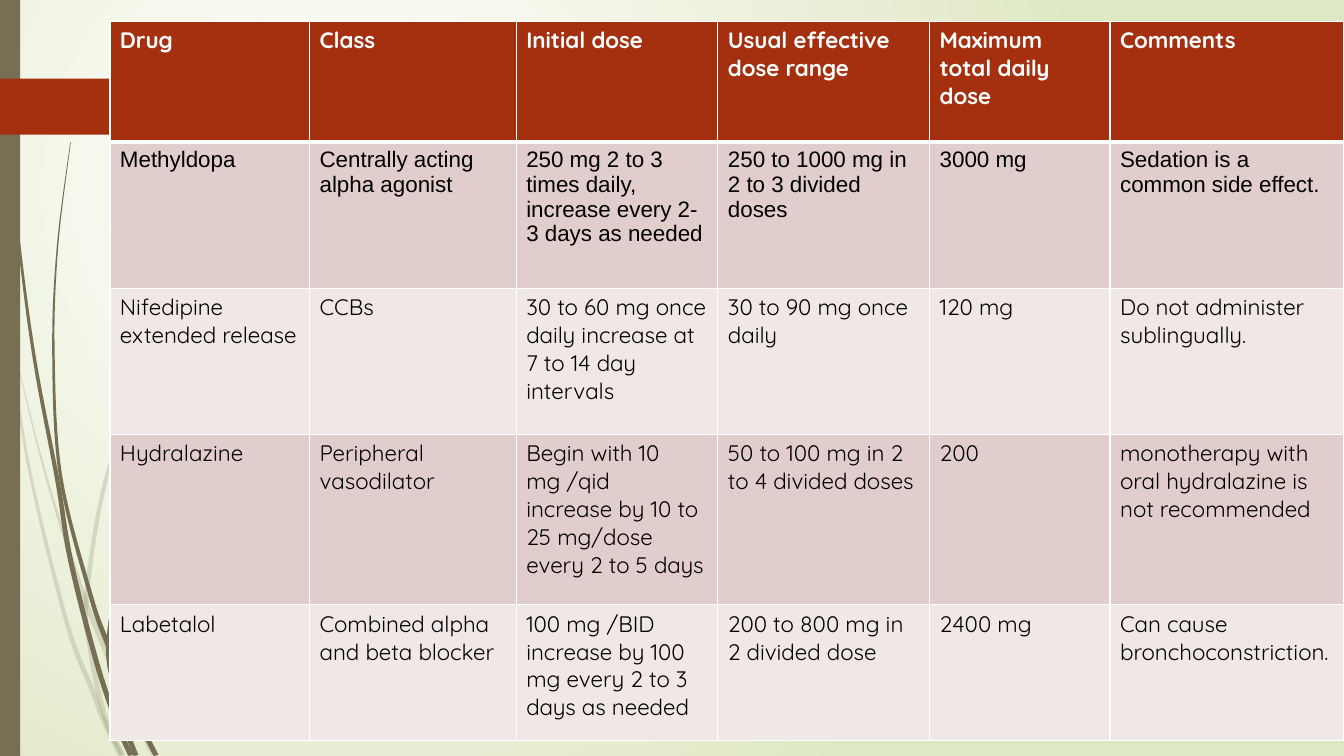
from dataclasses import dataclass
from math import hypot

from lxml import etree
from pptx import Presentation
from pptx.dml.color import RGBColor
from pptx.enum.shapes import MSO_SHAPE
from pptx.oxml.ns import qn
from pptx.util import Inches, Pt

RECT = MSO_SHAPE.RECTANGLE
ARROW = MSO_SHAPE.PENTAGON
WIDE, HIGH = 13.33, 7.5


@dataclass(frozen=True)
class Theme:
    white: str = "FFFFFF"
    mist: str = "DFE8C4"
    bark: str = "766F54"
    rust: str = "A53010"
    rose: str = "E1CDCC"
    pale: str = "F0E8E7"
    ink: str = "000000"
    font: str = "Quicksand"
    plain: str = "Arial"
    size: int = 16
    thin: int = 1
    thick: int = 3
    faint: int = 20


THEME = Theme()

COLS = [1.98, 2.05, 2, 2.1, 1.79, 2.32]
ROWS = [1.2, 1.45, 1.45, 1.69, 1.35]
DRUGS = [
    ["Drug", "Class", "Initial dose", "Usual effective dose range",
     "Maximum total daily dose", "Comments"],
    ["Methyldopa", "Centrally acting alpha agonist",
     "250 mg 2 to 3 times daily, increase every 2-3 days as needed",
     "250 to 1000 mg in 2 to 3 divided doses", "3000 mg", "Sedation is a common side effect."],
    ["Nifedipine extended release", "CCBs",
     "30 to 60 mg once daily increase at 7 to 14 day intervals",
     "30 to 90 mg once daily", "120 mg", "Do not administer sublingually."],
    ["Hydralazine", "Peripheral vasodilator",
     "Begin with 10 mg /qid\nincrease by 10 to 25 mg/dose every 2 to 5 days",
     "50 to 100 mg in 2 to 4 divided doses", "200",
     "monotherapy with oral hydralazine is not recommended"],
    ["Labetalol", "Combined alpha and beta blocker",
     "100 mg /BID increase by 100 mg every 2 to 3 days as needed",
     "200 to 800 mg in 2 divided dose", "2400 mg", "Can cause bronchoconstriction."],
]

PALE_GRASS = [
    ([(0, 2.85), (0.11, 3.5), (0.3, 4.7), (0.67, 6.2), (0.93, 6.88),
      (1.02, 7.13), (1.2, 7.5)], (1, 5)),
    ([(0.14, 3.45), (0.38, 4.44), (0.6, 5.2), (0.83, 5.9), (0.9, 6.1),
      (1.25, 6.93), (1.53, 7.5)], (3, 4)),
    ([(3.12, 1.53), (2.28, 2.45), (1.59, 3.48), (1.09, 4.61), (0.86, 5.9),
      (0.9, 6.46), (1.04, 7.11), (1.22, 7.5)], (4, 6)),
]
DARK_GRASS = [
    ([(0.03, 0), (0.07, 1.1), (0.18, 2.33), (0.34, 3.55), (0.57, 4.77),
      (0.7, 5.56), (0.96, 6.58), (1.17, 7.2), (1.3, 7.5)], (4, 7)),
    ([(0.7, 1.41), (0.57, 2.45), (0.53, 3.49), (0.6, 4.72), (0.9, 5.91),
      (1.06, 6.37), (1.12, 6.52), (1.34, 7.07), (1.55, 7.5)], (3, 5, 6)),
    ([(2.6, 3.44), (2.04, 4.06), (1.57, 4.75), (1.23, 5.51), (1.08, 6.35),
      (1.13, 6.8), (1.23, 7.18), (1.35, 7.5)], (4, 6)),
]
STEPS = 8


def rgb(tint):
    return RGBColor.from_string(tint)


def paint(shape, tint, alpha=100):
    shape.shadow.inherit = False
    shape.fill.solid()
    shape.fill.fore_color.rgb = rgb(tint)
    shape.line.fill.background()
    if alpha < 100:
        dye = shape.fill._xPr.find(".//" + qn("a:srgbClr"))
        etree.SubElement(dye, qn("a:alpha"), val=str(alpha * 1000))


def glow(slide):
    fill = slide.background.fill
    fill.gradient()
    for stop, tint, spot in zip(fill.gradient_stops, (THEME.white, THEME.mist), (0, 1)):
        stop.color.rgb = rgb(tint)
        stop.position = spot
    grad = slide.element.find(".//" + qn("a:gradFill"))
    grad.remove(grad.find(qn("a:lin")))
    ring = etree.SubElement(grad, qn("a:path"), {"path": "circle"})
    etree.SubElement(ring, qn("a:fillToRect"), l="50000", t="50000", r="100000", b="100000")


def smooth(knots):
    ends = [knots[0], *knots, knots[-1]]
    for quad in zip(ends, ends[1:], ends[2:], ends[3:]):
        for step in range(STEPS):
            t = step / STEPS
            yield tuple(
                (2 * q + (r - p) * t + (2 * p - 5 * q + 4 * r - s) * t ** 2
                 + (3 * q - p - 3 * r + s) * t ** 3) / 2
                for p, q, r, s in zip(*quad))
    yield knots[-1]


def blade(slide, box, knots, cuts, alpha):
    left, top = box[:2]
    spine = list(smooth(knots))
    last = len(spine) - 1
    near, far = [], []
    for i, (x, y) in enumerate(spine):
        ax, ay = spine[max(i - 1, 0)]
        bx, by = spine[min(i + 1, last)]
        half = 0.025 * min(1, 0.1 + 1.5 * i / last) / hypot(bx - ax, by - ay)
        dx, dy = half * (by - ay), half * (bx - ax)
        for edge, sign in ((near, -1), (far, 1)):
            edge.append((Inches(left + max(x + sign * dx, 0)),
                         Inches(top + min(y - sign * dy, HIGH))))
    marks = [0, *(cut * STEPS for cut in cuts), last]
    for start, end in zip(marks, marks[1:]):
        rim = near[start:end + 1] + far[start:end + 1][::-1]
        form = slide.shapes.build_freeform(*rim[0], scale=1)
        form.add_line_segments(rim[1:], close=True)
        paint(form.convert_to_shape(), THEME.bark, alpha)


def grass(slide, box):
    for group, alpha in ((PALE_GRASS, THEME.faint), (DARK_GRASS, 100)):
        for knots, cuts in group:
            blade(slide, box, knots, cuts, alpha)


def block(slide, box, kind, tint):
    shape = slide.shapes.add_shape(kind, *map(Inches, box))
    paint(shape, tint)
    return shape


def side(slide, box):
    left, top, width, height = box
    block(slide, (left, top, 0.015 * width, height), RECT, THEME.bark)
    tag = block(slide, (left, top + 0.104 * height, 0.13 * width, 0.074 * height),
                ARROW, THEME.rust)
    tag.adjustments[0] = 0.45


def rule(cell, row):
    props = cell._tc.get_or_add_tcPr()
    for spot, edge in enumerate(("lnL", "lnR", "lnT", "lnB")):
        bold = (row, edge) in ((0, "lnB"), (1, "lnT"))
        line = etree.Element(qn("a:" + edge), w=str(Pt(THEME.thick if bold else THEME.thin)))
        fill = etree.SubElement(line, qn("a:solidFill"))
        etree.SubElement(fill, qn("a:srgbClr"), val=THEME.white)
        props.insert(spot, line)


def write(cell, words, font, tint, bold):
    frame = cell.text_frame
    for i, part in enumerate(words.split("\n")):
        para = frame.add_paragraph() if i else frame.paragraphs[0]
        run = para.add_run()
        run.text = part
        run.font.name = font
        run.font.size = Pt(THEME.size)
        run.font.bold = bold
        run.font.color.rgb = rgb(tint)


def doses(slide, box):
    grid = slide.shapes.add_table(len(ROWS), len(COLS), *map(Inches, box)).table
    for col, width in zip(grid.columns, COLS):
        col.width = Inches(width)
    for row, height in zip(grid.rows, ROWS):
        row.height = Inches(height)
    for r, row in enumerate(DRUGS):
        head = r == 0
        back = THEME.rust if head else (THEME.pale, THEME.rose)[r % 2]
        font = THEME.plain if r == 1 else THEME.font
        for c, words in enumerate(row):
            cell = grid.cell(r, c)
            cell.fill.solid()
            cell.fill.fore_color.rgb = rgb(back)
            rule(cell, r)
            write(cell, words, font, THEME.white if head else THEME.ink, head)


def main():
    deck = Presentation()
    deck.slide_width, deck.slide_height = Inches(WIDE), Inches(HIGH)
    slide = deck.slides.add_slide(deck.slide_layouts[6])
    page = (0, 0, WIDE, HIGH)
    glow(slide)
    grass(slide, page)
    side(slide, page)
    doses(slide, (1.09, 0.21, sum(COLS), sum(ROWS)))
    deck.save("out.pptx")


if __name__ == "__main__":
    main()
